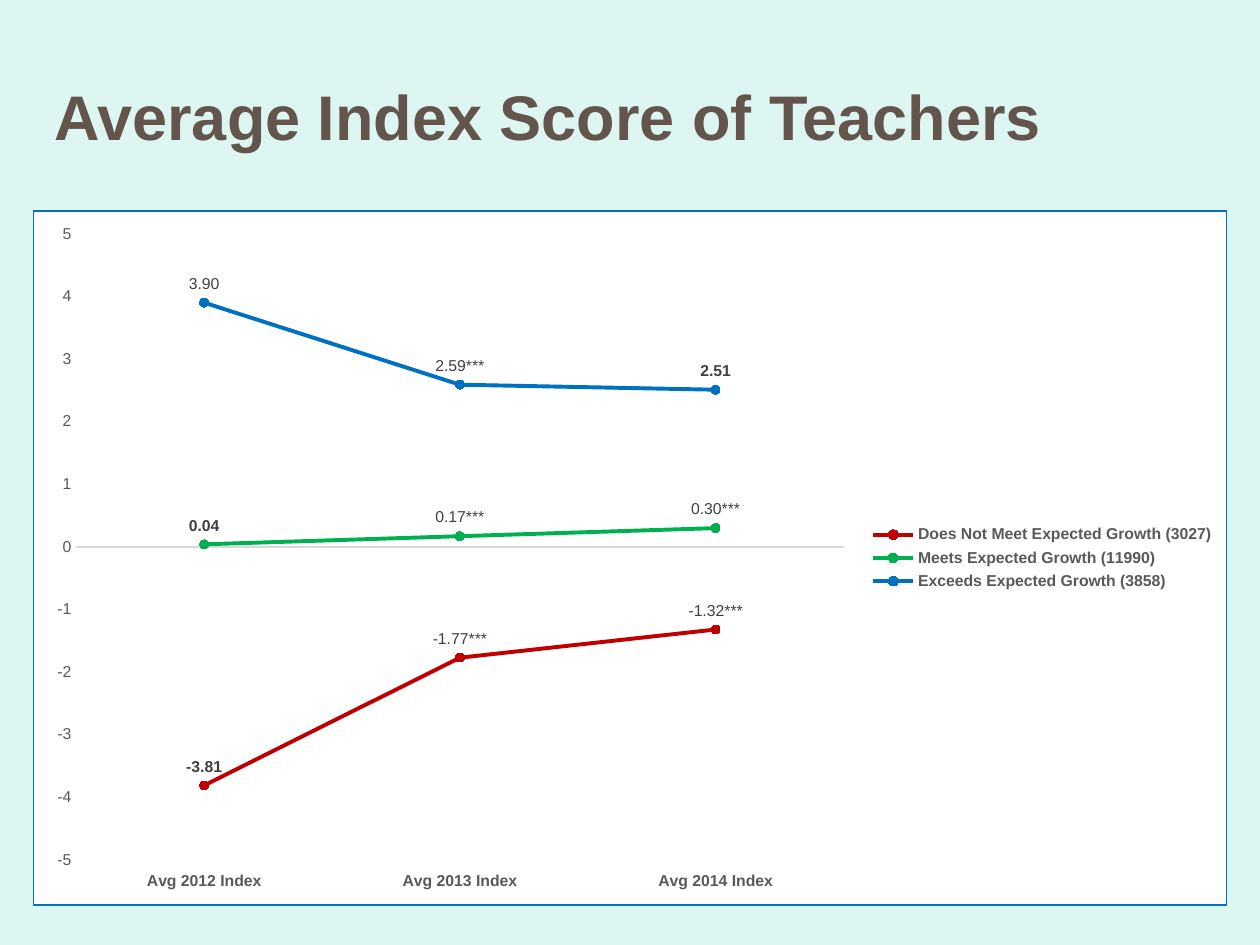
"""Build the slide that charts the average index score of teachers by growth group."""
from dataclasses import dataclass, field

from pptx import Presentation
from pptx import util as u
from pptx.chart import data
from pptx.chart.chart import Chart
from pptx.chart.series import LineSeries
from pptx.dml import color
from pptx.enum import chart as kinds, text
from pptx.oxml import ns, parse_xml
from pptx.text.text import Font, TextFrame

FONT = "Arial"
COLORS = {
    "background": "DEF6F1", "title": "63554C", "axis_text": "595959",
    "label": "404040", "axis_line": "D9D9D9", "panel": "FFFFFF",
    "red": "C00000", "green": "00B050", "blue": "0070C0",
}
CATEGORIES = ["Avg 2012 Index", "Avg 2013 Index", "Avg 2014 Index"]
PLOT_AREA = {"x": 0.036, "y": 0.033, "w": 0.643, "h": 0.902}


@dataclass
class Group:
    name: str
    hue: str
    scores: list[float]
    labels: dict[int, str] = field(default_factory=dict)


GROUPS = [
    Group("Does Not Meet Expected Growth (3027)", "red",
          [-3.81, -1.77, -1.32], {1: "-1.77***", 2: "-1.32***"}),
    Group("Meets Expected Growth (11990)", "green",
          [0.04, 0.17, 0.30], {1: "0.17***", 2: "0.30***"}),
    Group("Exceeds Expected Growth (3858)", "blue",
          [3.90, 2.59, 2.51], {0: "3.90", 1: "2.59***"}),
]


def rgb(name: str) -> color.RGBColor:
    return color.RGBColor.from_string(COLORS[name])


def style_font(font: Font, size: float, hue: str, bold: bool = False) -> None:
    font.name = FONT
    font.size = u.Pt(size)
    font.bold = bold
    font.color.rgb = rgb(hue)


def write_text(frame: TextFrame, content: str, *, size: float, hue: str,
               bold: bool = False) -> None:
    para = frame.paragraphs[0]
    span = para.add_run()
    span.text = content
    style_font(span.font, size, hue, bold)


def add_title(page, content: str) -> None:
    box = page.shapes.title
    box.left, box.top = u.Cm(0.84), u.Cm(0.84)
    box.width, box.height = u.Cm(23.7), u.Cm(2.97)
    frame = box.text_frame
    frame.word_wrap = True
    frame.auto_size = text.MSO_AUTO_SIZE.NONE
    frame.vertical_anchor = text.MSO_ANCHOR.MIDDLE
    write_text(frame, content, size=36, hue="title", bold=True)
    frame.paragraphs[0].alignment = text.PP_ALIGN.LEFT


def style_series(series: LineSeries, group: Group) -> None:
    series.smooth = False
    series.format.line.width = u.Pt(2.25)
    series.format.line.color.rgb = rgb(group.hue)
    marker = series.marker
    marker.style = kinds.XL_MARKER_STYLE.CIRCLE
    marker.size = 5
    marker.format.fill.solid()
    marker.format.fill.fore_color.rgb = rgb(group.hue)
    marker.format.line.color.rgb = rgb(group.hue)
    labels = series.data_labels
    labels.show_value = True
    labels.number_format = "0.00"
    labels.number_format_is_linked = False
    labels.position = kinds.XL_LABEL_POSITION.ABOVE
    style_font(labels.font, 9, "label", bold=True)
    for index, content in group.labels.items():
        label = series.points[index].data_label
        write_text(label.text_frame, content, size=9, hue="label")
        label.position = kinds.XL_LABEL_POSITION.ABOVE


def style_axes(chart: Chart) -> None:
    for axis in (chart.category_axis, chart.value_axis):
        axis.has_major_gridlines = False
        axis.major_tick_mark = kinds.XL_TICK_MARK.NONE
        axis.minor_tick_mark = kinds.XL_TICK_MARK.NONE
    months = chart.category_axis
    months.tick_label_position = kinds.XL_TICK_LABEL_POSITION.LOW
    months.format.line.color.rgb = rgb("axis_line")
    months.format.line.width = u.Pt(0.75)
    style_font(months.tick_labels.font, 9, "axis_text", bold=True)
    scores = chart.value_axis
    scores.minimum_scale, scores.maximum_scale, scores.major_unit = -5, 5, 1
    scores.format.line.fill.background()
    scores.tick_labels.number_format = "0"
    scores.tick_labels.number_format_is_linked = False
    style_font(scores.tick_labels.font, 9, "axis_text")


def frame_chart(chart: Chart) -> None:
    space = chart.element
    space.find(ns.qn("c:chart")).addnext(parse_xml(
        f'<c:spPr {ns.nsdecls("c", "a")}>'
        f'<a:solidFill><a:srgbClr val="{COLORS["panel"]}"/></a:solidFill>'
        f'<a:ln w="{u.Pt(0.75)}"><a:solidFill><a:srgbClr val="{COLORS["blue"]}"/>'
        '</a:solidFill></a:ln></c:spPr>'))
    plot_area = space.find(".//" + ns.qn("c:plotArea"))
    for layout in plot_area.findall(ns.qn("c:layout")):
        plot_area.remove(layout)
    sizes = "".join(f'<c:{key} val="{value}"/>' for key, value in PLOT_AREA.items())
    plot_area.insert(0, parse_xml(
        f'<c:layout {ns.nsdecls("c")}><c:manualLayout><c:layoutTarget val="inner"/>'
        f'<c:xMode val="edge"/><c:yMode val="edge"/>{sizes}'
        '</c:manualLayout></c:layout>'))


def add_score_chart(page) -> None:
    scores = data.CategoryChartData(number_format="0.00")
    scores.categories = CATEGORIES
    for group in GROUPS:
        scores.add_series(group.name, group.scores)
    chart = page.shapes.add_chart(
        kinds.XL_CHART_TYPE.LINE_MARKERS, u.Cm(0.66), u.Cm(4.24),
        u.Cm(24.08), u.Cm(14.02), scores).chart
    chart.has_title = False
    chart.font.name = FONT
    chart.font.size = u.Pt(10)
    chart.plots[0].vary_by_categories = False
    chart.has_legend = True
    chart.legend.position = kinds.XL_LEGEND_POSITION.RIGHT
    chart.legend.include_in_layout = False
    style_font(chart.legend.font, 9, "axis_text", bold=True)
    style_axes(chart)
    for series, group in zip(chart.plots[0].series, GROUPS):
        style_series(series, group)
    frame_chart(chart)


def main() -> None:
    deck = Presentation()
    deck.slide_width, deck.slide_height = u.Cm(25.4), u.Cm(19.05)
    page = deck.slides.add_slide(deck.slide_layouts.get_by_name("Title Only"))
    page.background.fill.solid()
    page.background.fill.fore_color.rgb = rgb("background")
    add_title(page, "Average Index Score of Teachers")
    add_score_chart(page)
    deck.save("out.pptx")


if __name__ == "__main__":
    main()
